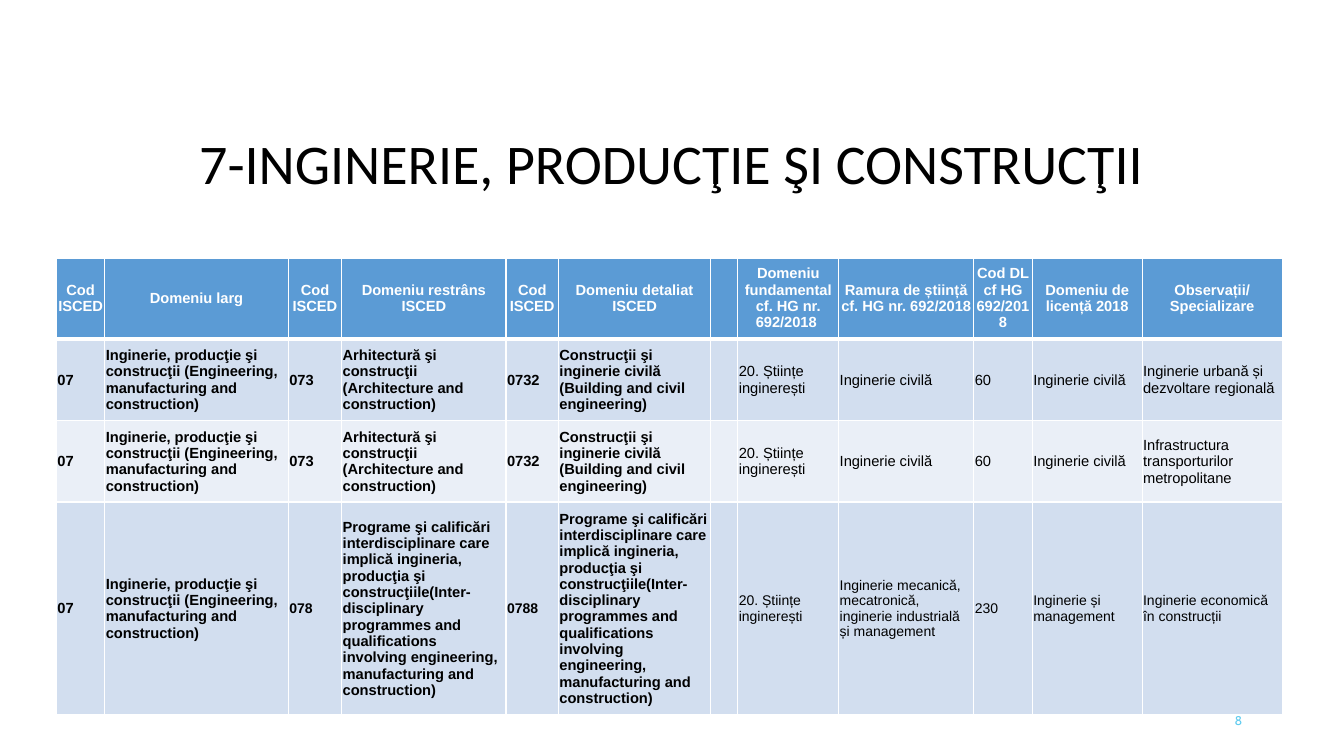
from dataclasses import dataclass

from lxml.etree import SubElement
from pptx import Presentation
from pptx.dml.color import RGBColor
from pptx.enum.text import MSO_ANCHOR, PP_ALIGN
from pptx.oxml.ns import qn
from pptx.util import Inches, Pt


@dataclass(frozen=True)
class Theme:
    title_font: str = "Calibri"
    table_font: str = "Arial"
    number_font: str = "Cabin"
    ink: str = "000000"
    white: str = "FFFFFF"
    header_fill: str = "5B9BD5"
    band_fills: tuple = ("D2DEEF", "EAEFF7")
    number_color: str = "5FCBEF"
    title_size: float = 40
    table_size: float = 10.5
    small_size: float = 10
    number_size: float = 9


class SlideBuilder:
    def __init__(self, deck, theme):
        self.theme = theme
        self.page = deck.slides.add_slide(deck.slide_layouts[6])

    def style(self, para, font, size, color, bold=False, align=PP_ALIGN.LEFT):
        para.alignment = align
        for span in para.runs or [para]:
            span.font.name = font
            span.font.size = Pt(size)
            span.font.bold = bold
            span.font.color.rgb = RGBColor.from_string(color)

    def text(self, content, left, top, width, height, font, size, color, align):
        box = self.page.shapes.add_textbox(
            Inches(left), Inches(top), Inches(width), Inches(height))
        frame = box.text_frame
        frame.word_wrap = True
        frame.vertical_anchor = MSO_ANCHOR.MIDDLE
        frame.text = content
        para = frame.paragraphs[0]
        self.style(para, font, size, color, align=align)
        return para

    def borders(self, cell, top, bottom):
        properties = cell._tc.get_or_add_tcPr()
        for side, width in (("L", 1), ("R", 1), ("T", top), ("B", bottom)):
            line = SubElement(properties, qn(f"a:ln{side}"), w=str(Pt(width)))
            fill = SubElement(line, qn("a:solidFill"))
            SubElement(fill, qn("a:srgbClr"), val=self.theme.white)

    def cell(self, cell, content, fill, margin, top, bottom, **style):
        cell.margin_left = cell.margin_right = cell.margin_top = Inches(margin)
        cell.margin_bottom = 0
        cell.vertical_anchor = MSO_ANCHOR.MIDDLE
        self.borders(cell, top, bottom)
        cell.fill.solid()
        cell.fill.fore_color.rgb = RGBColor.from_string(fill)
        cell.text = content
        self.style(cell.text_frame.paragraphs[0], self.theme.table_font, **style)

    def table(self, left, top, widths, heights, header, rows):
        theme = self.theme
        table = self.page.shapes.add_table(
            len(heights), len(widths), Inches(left), Inches(top),
            Inches(sum(widths)), Inches(sum(heights))).table
        table.first_row = table.horz_banding = False
        for column, width in zip(table.columns, widths):
            column.width = Inches(width)
        for row, height in zip(table.rows, heights):
            row.height = Inches(height)

        # Header row with a thick rule below
        for col, label in enumerate(header):
            self.cell(table.cell(0, col), label, theme.header_fill, 0, 1, 3,
                      size=theme.table_size, color=theme.white, bold=True,
                      align=PP_ALIGN.CENTER)

        # Banded body: ISCED columns are bold, the last row is partly smaller
        for index, values in enumerate(rows, start=1):
            fill = theme.band_fills[(index - 1) % 2]
            for col, value in enumerate(values):
                small = index == len(rows) and (col in (2, 4) or col > 6)
                justified = value.endswith(" ")
                self.cell(table.cell(index, col), value, fill, 0.01,
                          3 if index == 1 else 1, 1,
                          size=theme.small_size if small else theme.table_size,
                          color=theme.ink, bold=col < 6,
                          align=PP_ALIGN.JUSTIFY if justified else PP_ALIGN.LEFT)


WIDTHS = (0.48, 1.82, 0.53, 1.63, 0.52, 1.51, 0.27, 1, 1.34, 0.58, 1.09, 1.39)
HEIGHTS = (0.8, 0.81, 0.81, 1.94)
HEADER = (
    "Cod ISCED", "Domeniu larg", "Cod ISCED", "Domeniu restrâns ISCED",
    "Cod ISCED", "Domeniu detaliat ISCED", "",
    "Domeniu fundamental cf. HG nr. 692/2018 ",
    "Ramura de știință cf. HG nr. 692/2018", "Cod DL cf HG 692/2018",
    "Domeniu de licență 2018", "Observații/ Specializare",
)
BROAD = ("07", "Inginerie, producţie şi construcţii "
         "(Engineering, manufacturing and construction)")
CIVIL = BROAD + (
    "073", "Arhitectură şi construcţii (Architecture and construction)",
    "0732 ", "Construcţii şi inginerie civilă (Building and civil engineering)",
    "", "20. Științe inginerești", "Inginerie civilă", "60", "Inginerie civilă",
)
PROGRAMMES = (
    "Programe şi calificări interdisciplinare care implică ingineria, "
    "producţia şi construcţiile(Inter-disciplinary programmes and "
    "qualifications involving engineering, manufacturing and construction)")
ROWS = (
    CIVIL + ("Inginerie urbană și dezvoltare regională",),
    CIVIL + ("Infrastructura transporturilor metropolitane",),
    BROAD + (
        "078 ", PROGRAMMES, "0788", PROGRAMMES, "", "20. Științe inginerești",
        "Inginerie mecanică, mecatronică, inginerie industrială și management",
        "230", "Inginerie și management", "Inginerie economică în construcții"),
)


def main():
    deck = Presentation()
    deck.slide_width, deck.slide_height = Inches(13.33), Inches(7.5)
    theme = Theme()
    builder = SlideBuilder(deck, theme)

    # Title
    title = builder.text(
        "7-INGINERIE, PRODUCŢIE ŞI CONSTRUCŢII ", 0.97, 1.29, 11.5, 0.72,
        theme.title_font, theme.title_size, theme.ink, PP_ALIGN.CENTER)
    title.line_spacing = 0.9

    # Classification table
    builder.table(0.56, 2.56, WIDTHS, HEIGHTS, HEADER, ROWS)

    # Page number
    builder.text("8", 9.42, 6.95, 3, 0.4, theme.number_font,
                 theme.number_size, theme.number_color, PP_ALIGN.RIGHT)
    deck.save("out.pptx")


if __name__ == "__main__":
    main()
